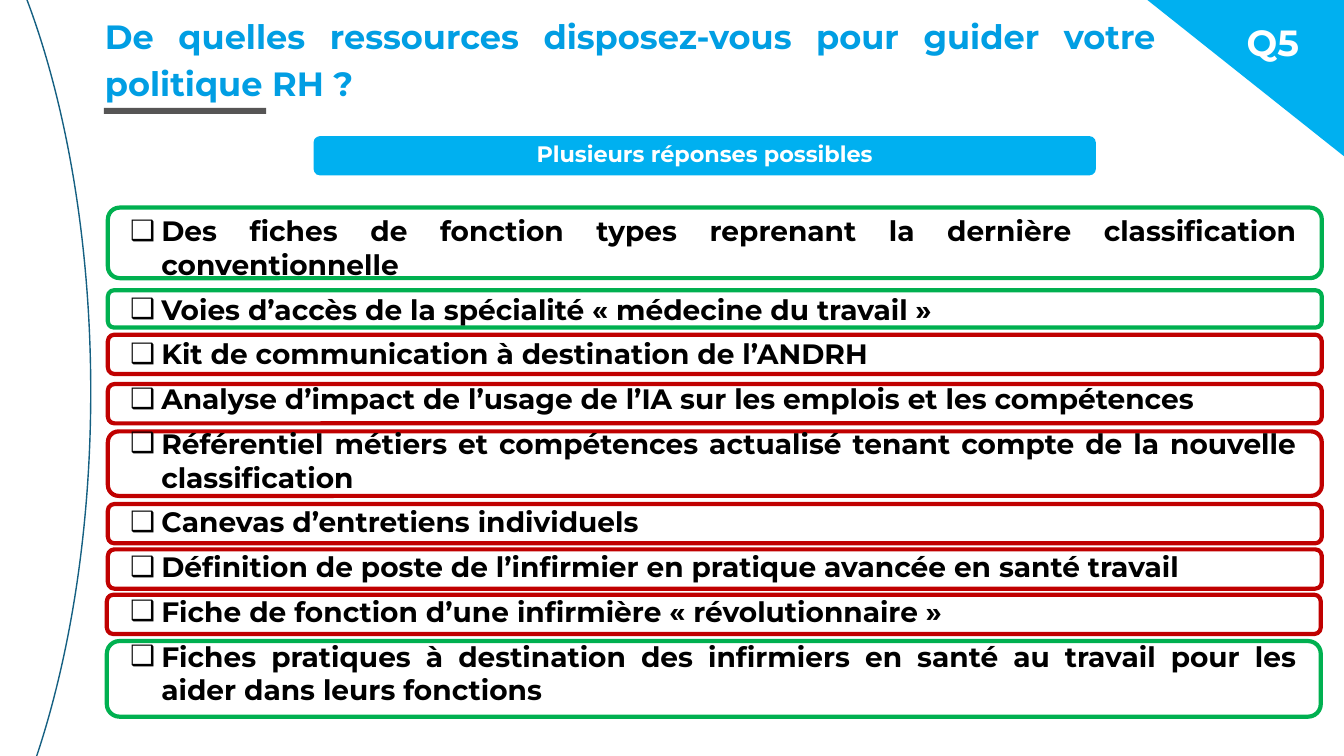
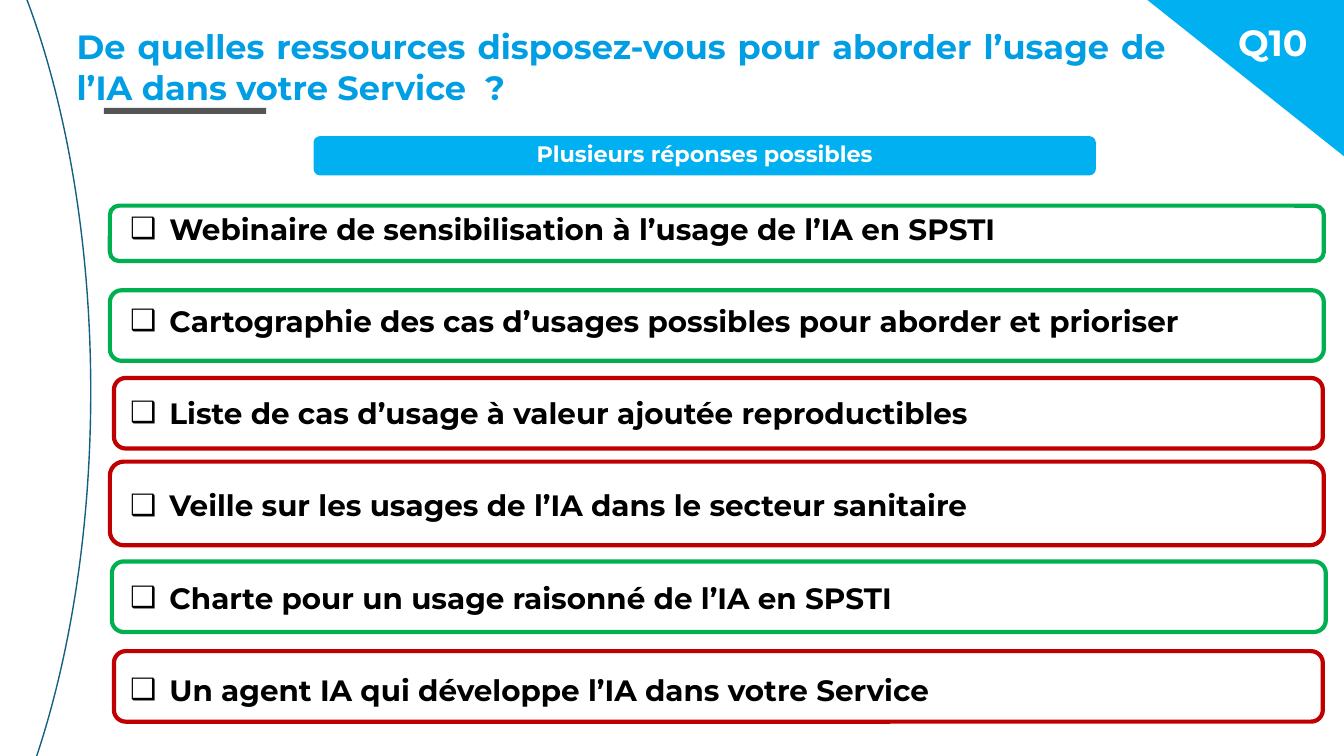
from dataclasses import dataclass

from lxml import etree
from pptx import Presentation
from pptx import util as u
from pptx.dml.color import RGBColor
from pptx.enum import shapes, text
from pptx.oxml import ns

PX = 9144  # EMU in one px, 100 px to the inch
SLIDE_SIZE = (1333, 750)

FONT = "Montserrat"
TITLE_BLUE = RGBColor(0x01, 0x9E, 0xE3)
BAND_BLUE = RGBColor(0x00, 0xB0, 0xF0)
ARC_BLUE = RGBColor(0x15, 0x60, 0x82)
RULE_GREY = RGBColor(0x56, 0x55, 0x55)
RIGHT_GREEN = RGBColor(0x00, 0xB0, 0x50)
WRONG_RED = RGBColor(0xC0, 0x00, 0x00)
WHITE = RGBColor(0xFF, 0xFF, 0xFF)
BLACK = RGBColor(0x00, 0x00, 0x00)

Box = tuple[int, int, int, int]


@dataclass(frozen=True)
class Answer:
    label: str
    right: bool
    top: int
    height: int
    left: int = 107
    width: int = 1204


@dataclass(frozen=True)
class Question:
    number: str
    title: str
    title_box: Box
    title_spacing: float
    list_box: Box
    list_size: int
    list_indent: int
    list_gap: float
    answers: list[Answer]


QUESTIONS = [
    Question(
        "Q5",
        "De quelles ressources disposez-vous pour guider votre politique RH ?",
        (94, 5, 1062, 112), 1.15,
        (119, 207, 1177, 544), 20, 31, 8,
        [
            Answer("Des fiches de fonction types reprenant la dernière classification "
                   "conventionnelle", True, 206, 70),
            Answer("Voies d’accès de la spécialité « médecine du travail »", True, 288, 37),
            Answer("Kit de communication à destination de l’ANDRH", False, 332, 39),
            Answer("Analyse d’impact de l’usage de l’IA sur les emplois et les compétences",
                   False, 381, 39),
            Answer("Référentiel métiers et compétences actualisé tenant compte de la "
                   "nouvelle classification", False, 428, 64),
            Answer("Canevas d’entretiens individuels", False, 500, 39),
            Answer("Définition de poste de l’infirmier en pratique avancée en santé travail",
                   False, 545, 39),
            Answer("Fiche de fonction d’une infirmière « révolutionnaire »",
                   False, 590, 39, left=106),
            Answer("Fiches pratiques à destination des infirmiers en santé au travail pour "
                   "les aider dans leurs fonctions", True, 636, 75, left=106),
        ],
    ),
    Question(
        "Q10",
        "De quelles ressources disposez-vous pour aborder l’usage de l’IA dans votre Service  ?",
        (66, 21, 1100, 112), 1.0,
        (119, 204, 1182, 511), 21, 39, 40.7,
        [
            Answer("Webinaire de sensibilisation à l’usage de l’IA en SPSTI",
                   True, 204, 55, left=109),
            Answer("Cartographie des cas d’usages possibles pour aborder et prioriser",
                   True, 288, 70, left=109),
            Answer("Liste de cas d’usage à valeur ajoutée reproductibles",
                   False, 375, 70, left=113, width=1199),
            Answer("Veille sur les usages de l’IA dans le secteur sanitaire",
                   False, 458, 83, left=109),
            Answer("Charte pour un usage raisonné de l’IA en SPSTI", True, 557, 70, left=111),
            Answer("Un agent IA qui développe l’IA dans votre Service",
                   False, 646, 70, left=113, width=1199),
        ],
    ),
]


def emu(box: Box) -> list[int]:
    return [length * PX for length in box]


def place(holder, box: Box) -> None:
    """Position a placeholder, bring it to the front and let its text start at the top."""
    holder.left, holder.top, holder.width, holder.height = emu(box)
    holder.element.getparent().append(holder.element)
    frame = holder.text_frame
    frame.word_wrap = True
    frame.auto_size = text.MSO_AUTO_SIZE.NONE
    frame.vertical_anchor = text.MSO_ANCHOR.TOP


def style(paragraph, size: int, color: RGBColor, align, spacing: float,
          after: float = 0) -> None:
    paragraph.alignment = align
    paragraph.line_spacing = spacing
    paragraph.space_before = u.Pt(0)
    paragraph.space_after = u.Pt(after)
    font = paragraph.font
    font.name, font.size, font.bold = FONT, u.Pt(size), True
    font.color.rgb = color


def add_preset(slide, preset, box: Box, fill: RGBColor | None = None,
               line: RGBColor | None = None, weight: float = 1):
    shape = slide.shapes.add_shape(preset, *emu(box))
    shape.shadow.inherit = False
    if fill is None:
        shape.fill.background()
    else:
        shape.fill.solid()
        shape.fill.fore_color.rgb = fill
    if line is None:
        shape.line.fill.background()
    else:
        shape.line.color.rgb = line
        shape.line.width = u.Pt(weight)
    return shape


def decorate_layout(layout, slide) -> None:
    """Draw the arc and the title rule, then hand them to the layout."""
    arc = add_preset(slide, shapes.MSO_SHAPE.ARC, (-442, -212, 532, 1201), line=ARC_BLUE)
    arc.adjustments[0], arc.adjustments[1] = 178.34, 35.857
    rule = add_preset(slide, shapes.MSO_SHAPE.RECTANGLE, (103, 107, 161, 6), RULE_GREY)
    for shape_id, shape in enumerate((arc, rule), start=20):
        shape.element.nvSpPr.cNvPr.set("id", str(shape_id))
        layout.shapes.element.append(shape.element)


def add_checkbox(paragraph, indent: int) -> None:
    properties = paragraph._p.get_or_add_pPr()
    properties.set("marL", str(indent * PX))
    properties.set("indent", str(-indent * PX))
    etree.SubElement(properties, ns.qn("a:buChar")).set("char", "❑")


def add_answers(slide, question: Question) -> None:
    for answer in question.answers:
        add_preset(slide, shapes.MSO_SHAPE.ROUNDED_RECTANGLE,
                   (answer.left, answer.top, answer.width, answer.height),
                   WHITE, RIGHT_GREEN if answer.right else WRONG_RED, 3)
    body = slide.placeholders[1]
    place(body, question.list_box)
    body.text_frame.text = "\n".join(answer.label for answer in question.answers)
    for paragraph in body.text_frame.paragraphs:
        add_checkbox(paragraph, question.list_indent)
        style(paragraph, question.list_size, BLACK, text.PP_ALIGN.JUSTIFY, 1.0,
              question.list_gap)


def add_title(slide, question: Question) -> None:
    title = slide.shapes.title
    place(title, question.title_box)
    title.text_frame.text = question.title
    style(title.text_frame.paragraphs[0], 24, TITLE_BLUE, text.PP_ALIGN.JUSTIFY,
          question.title_spacing)


def add_corner(slide, number: str) -> None:
    corner = add_preset(slide, shapes.MSO_SHAPE.RIGHT_TRIANGLE, (1138, 0, 195, 155), BAND_BLUE)
    corner.rotation = 180
    label = slide.shapes.add_textbox(*emu((1166, 20, 193, 57))).text_frame
    label.word_wrap = True
    label.text = number
    style(label.paragraphs[0], 26, WHITE, text.PP_ALIGN.CENTER, 0.9)


def add_hint(slide) -> None:
    hint = add_preset(slide, shapes.MSO_SHAPE.ROUNDED_RECTANGLE, (311, 135, 776, 39),
                      BAND_BLUE).text_frame
    hint.vertical_anchor = text.MSO_ANCHOR.MIDDLE
    hint.text = "Plusieurs réponses possibles"
    style(hint.paragraphs[0], 16, WHITE, text.PP_ALIGN.CENTER, 0.9)


def main() -> None:
    deck = Presentation()
    deck.slide_width, deck.slide_height = (length * PX for length in SLIDE_SIZE)
    layout = deck.slide_layouts[1]
    slides = [deck.slides.add_slide(layout) for _ in QUESTIONS]
    decorate_layout(layout, slides[0])
    for slide, question in zip(slides, QUESTIONS):
        add_title(slide, question)
        add_corner(slide, question.number)
        add_hint(slide)
        add_answers(slide, question)
    deck.save("out.pptx")


if __name__ == "__main__":
    main()
